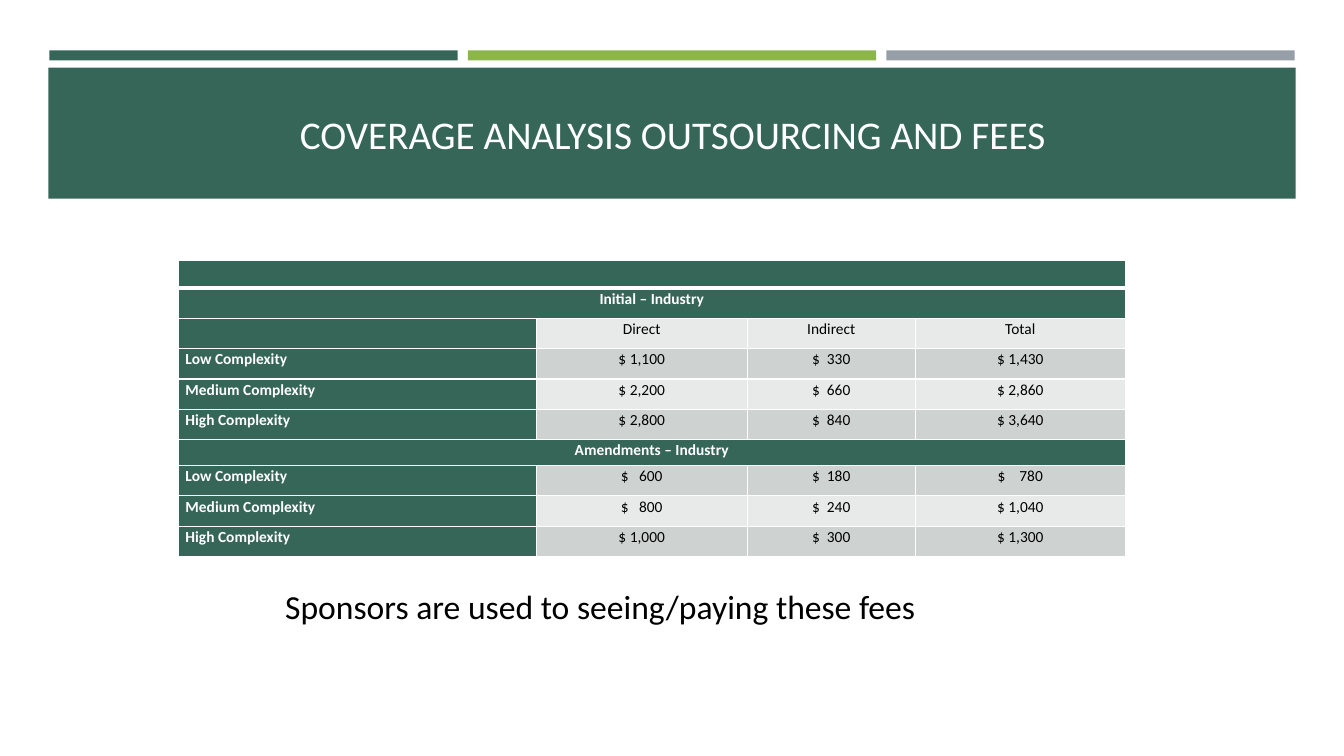
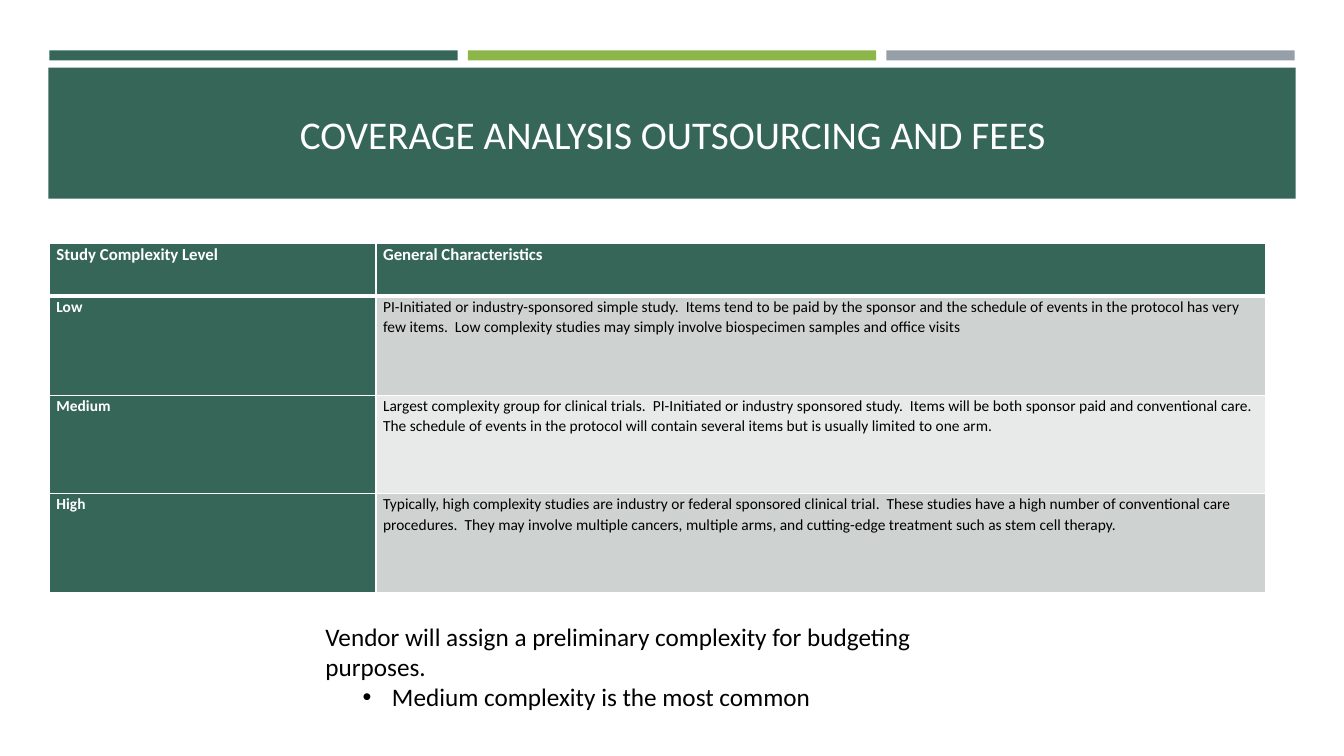
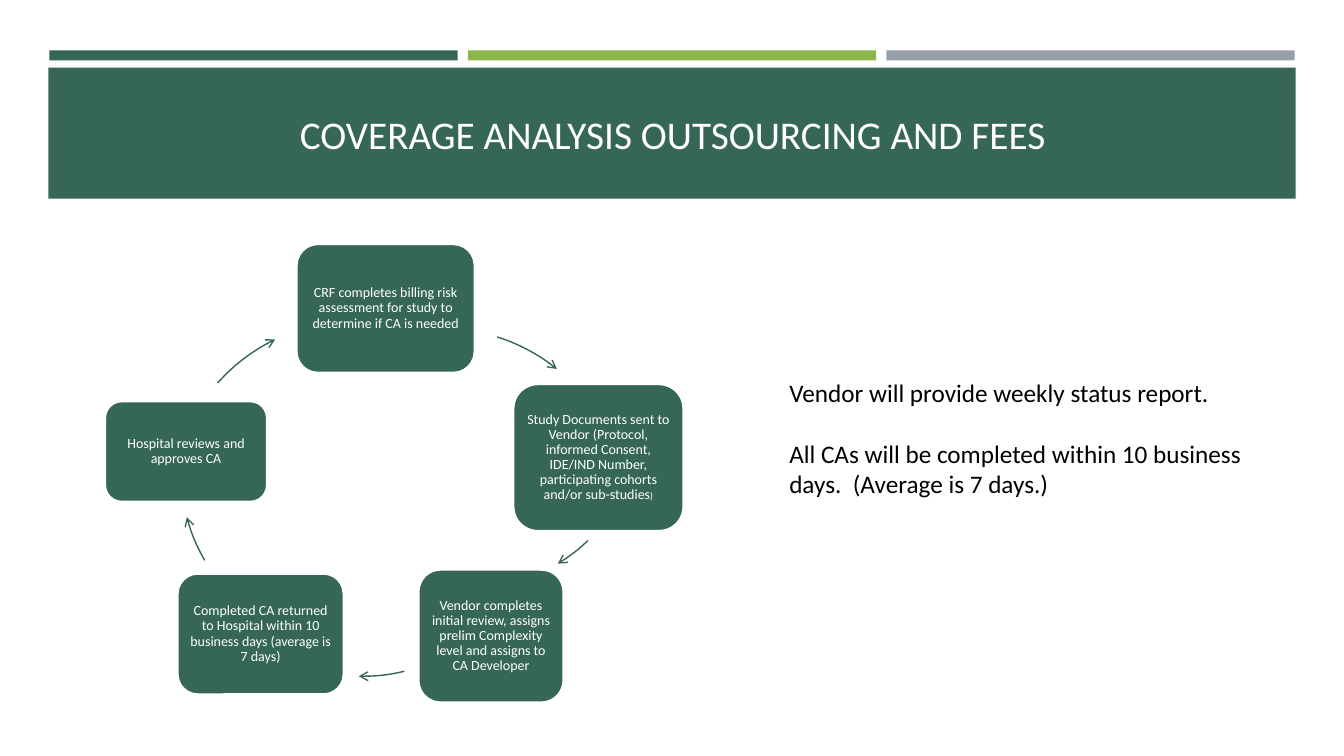
import lxml.etree
import pptx
import pptx.dml.color
import pptx.enum.shapes
import pptx.enum.text
import pptx.oxml.ns
import pptx.util

SHAPE = pptx.enum.shapes.MSO_SHAPE
ALIGN = pptx.enum.text.PP_ALIGN
ANCHOR = pptx.enum.text.MSO_ANCHOR
qn = pptx.oxml.ns.qn

GREEN, LIME, GREY = "366658", "8CB64A", "969FA7"
WHITE, BLACK = "FFFFFF", "000000"
STRIPES = ["E8EAEA", "CED3D1"]
FONT = "Calibri"
TITLE = "COVERAGE ANALYSIS OUTSOURCING AND FEES"


def px(length):
    return pptx.util.Emu(length * 9144)


def paint(target, colour):
    target.solid()
    target.fore_color.rgb = pptx.dml.color.RGBColor.from_string(colour)


class Deck:
    def __init__(self):
        self.deck = pptx.Presentation()
        self.deck.slide_width, self.deck.slide_height = px(1333), px(750)
        self.layout = self.deck.slide_layouts[5]
        self.page = None

    def open_page(self):
        first = self.page is None
        self.page = self.deck.slides.add_slide(self.layout)
        if first:
            self.share_bands()
        title = self.page.shapes.title
        title.left, title.top, title.width, title.height = map(px, (64, 77, 1206, 111))
        title.text_frame.text = TITLE
        title.text_frame.word_wrap = True
        title.text_frame.vertical_anchor = ANCHOR.MIDDLE
        title.text_frame.paragraphs[0].alignment = ALIGN.CENTER
        self.style(title.text_frame.paragraphs[0], 28, WHITE)

    def share_bands(self):
        bands = [(49 + 415 * i, 50, 405, 10, colour) for i, colour in enumerate((GREEN, LIME, GREY))]
        bands.append((48, 67, 1237, 130, GREEN))
        for number, (*place, colour) in enumerate(bands):
            band = self.shape(SHAPE.RECTANGLE, place, colour)
            band.element.nvSpPr.cNvPr.set("id", str(100 + number))
            self.layout.shapes.element.append(band.element)

    def style(self, para, size, colour, bold=False):
        for span in para.runs:
            span.font.name = FONT
            span.font.size = pptx.util.Pt(size)
            span.font.bold = bold
            paint(span.font.fill, colour)

    def shape(self, kind, place, fill=None, line=None, width=1):
        shape = self.page.shapes.add_shape(kind, *map(px, place))
        shape.shadow.inherit = False
        if fill:
            paint(shape.fill, fill)
        else:
            shape.fill.background()
        if line:
            paint(shape.line.fill, line)
            shape.line.width = pptx.util.Pt(width)
        else:
            shape.line.fill.background()
        return shape

    def text(self, place, lines, size, gap=0):
        box = self.page.shapes.add_textbox(*map(px, place))
        frame = box.text_frame
        frame.word_wrap = True
        frame.auto_size = pptx.enum.text.MSO_AUTO_SIZE.SHAPE_TO_FIT_TEXT
        frame.text = "\n".join(lines)
        for para in frame.paragraphs:
            self.style(para, size, BLACK)
        for para in frame.paragraphs[1:]:
            para.space_before = pptx.util.Pt(gap)
        return frame

    def bullet(self, para, left, hang):
        props = para._p.get_or_add_pPr()
        props.set("marL", str(px(left)))
        props.set("indent", str(-px(hang)))
        lxml.etree.SubElement(props, qn("a:buFont"), typeface="Arial")
        lxml.etree.SubElement(props, qn("a:buChar"), char="•")

    def step(self, place, text, small_end=""):
        box = self.shape(SHAPE.ROUNDED_RECTANGLE, place, GREEN, WHITE, 1.75)
        frame = box.text_frame
        frame.word_wrap = True
        frame.vertical_anchor = ANCHOR.MIDDLE
        frame.margin_left = frame.margin_right = frame.margin_top = frame.margin_bottom = px(4)
        frame.text = text
        para = frame.paragraphs[0]
        para.alignment = ALIGN.CENTER
        para.line_spacing = 0.9
        if small_end:
            para.add_run().text = small_end
        self.style(para, 10, WHITE)
        if small_end:
            para.runs[-1].font.size = pptx.util.Pt(7)

    def arc_arrow(self, left, top, start, end):
        arc = self.shape(SHAPE.ARC, (left, top, 360, 360), line=GREEN)
        for index, degrees in enumerate((start, end)):
            arc.adjustments[index] = degrees * 0.6
        lxml.etree.SubElement(arc.element.spPr.find(qn("a:ln")), qn("a:tailEnd"), type="arrow")

    def borders(self, cell, top, bottom):
        props = cell._tc.get_or_add_tcPr()
        for side, width in (("L", 1), ("R", 1), ("T", top), ("B", bottom)):
            line = lxml.etree.SubElement(props, qn("a:ln" + side), w=str(pptx.util.Pt(width)))
            fill = lxml.etree.SubElement(line, qn("a:solidFill"))
            lxml.etree.SubElement(fill, qn("a:srgbClr"), val=WHITE)

    def table(self, left, top, widths, heights, rows, centred=False):
        place = (left, top, sum(widths), sum(heights))
        table = self.page.shapes.add_table(len(rows), len(widths), *map(px, place)).table
        for column, width in zip(table.columns, widths):
            column.width = px(width)
        for row, height in zip(table.rows, heights):
            row.height = px(height)
        for r, texts in enumerate(rows):
            spans = len(texts) == 1
            for c in range(len(widths)):
                cell = table.cell(r, c)
                heading = r == 0 or c == 0 or spans
                self.borders(cell, 3 if r == 1 else 1, 3 if r == 0 else 1)
                paint(cell.fill, GREEN if heading else STRIPES[r % 2])
                cell.margin_left = cell.margin_right = px(7)
                cell.margin_top = cell.margin_bottom = 0
                text = texts[c] if c < len(texts) else ""
                cell.text_frame.text = text
                para = cell.text_frame.paragraphs[0]
                para.line_spacing = 1.07
                if centred and (spans or c > 0):
                    para.alignment = ALIGN.CENTER
                if not text:
                    lxml.etree.SubElement(para._p, qn("a:endParaRPr"), sz="1100")
                elif r == 0 or spans:
                    para.space_before = pptx.util.Pt(2 if spans else 12)
                self.style(para, 12 if r == 0 else 11, WHITE if heading else BLACK, heading)
            if spans:
                table.cell(r, 0).merge(table.cell(r, len(widths) - 1))


def fees_page(deck):
    deck.open_page()
    deck.text((273, 576, 921, 121), ["Sponsors are used to seeing/paying these fees"], 24)
    rows = [
        [""],
        ["Initial – Industry"],
        ["", "Direct", "Indirect", "Total"],
        ["Low Complexity", "$ 1,100", "$  330", "$ 1,430"],
        ["Medium Complexity", "$ 2,200", "$  660", "$ 2,860"],
        ["High Complexity", "$ 2,800", "$  840", "$ 3,640"],
        ["Amendments – Industry"],
        ["Low Complexity", "$   600", "$  180", "$    780"],
        ["Medium Complexity", "$   800", "$  240", "$ 1,040"],
        ["High Complexity", "$ 1,000", "$  300", "$ 1,300"],
    ]
    heights = [28, 30, 30, 30, 30, 30, 26, 30, 30, 30]
    deck.table(177, 258, [355, 209, 167, 208], heights, rows, centred=True)


def complexity_page(deck):
    deck.open_page()
    rows = [
        ["Study Complexity Level", "General Characteristics"],
        ["Low", "PI-Initiated or industry-sponsored simple study.  Items tend to be paid by the sponsor "
         "and the schedule of events in the protocol has very few items.  Low complexity studies may "
         "simply involve biospecimen samples and office visits"],
        ["Medium", "Largest complexity group for clinical trials.  PI-Initiated or industry sponsored "
         "study.  Items will be both sponsor paid and conventional care.  The schedule of events in the "
         "protocol will contain several items but is usually limited to one arm."],
        ["High", "Typically, high complexity studies are industry or federal sponsored clinical trial.  "
         "These studies have a high number of conventional care procedures.  They may involve multiple "
         "cancers, multiple arms, and cutting-edge treatment such as stem cell therapy."],
    ]
    deck.table(49, 241, [324, 882], [53, 98, 98, 98], rows)
    lines = ["Vendor will assign a preliminary complexity for budgeting purposes.",
             "Medium complexity is the most common"]
    frame = deck.text((313, 611, 667, 101), lines, 18)
    deck.bullet(frame.paragraphs[1], 66, 29)


def process_page(deck):
    deck.open_page()
    steps = [
        ((294, 242, 177, 128), "CRF completes billing risk assessment for study to determine if CA is needed"),
        ((509, 381, 169, 146), "Study Documents sent to Vendor (Protocol, informed Consent, IDE/IND Number, "
         "participating cohorts and/or sub-studies", ")"),
        ((415, 565, 144, 132), "Vendor completes initial review, assigns prelim Complexity level and assigns "
         "to CA Developer"),
        ((176, 569, 165, 120), "Completed CA returned to Hospital within 10 business days (average is 7 days)"),
        ((104, 398, 161, 100), "Hospital reviews and approves CA"),
    ]
    arrows = [
        (259, 326, 287.5, 309),
        (279, 226, 46.4, 58.4),
        (179, 311, 76.5, 91),
        (179, 286, 150, 164.8),
        (171, 319, 221.4, 244.3),
    ]
    for step, arrow in zip(steps, arrows):
        deck.step(*step)
        deck.arc_arrow(*arrow)
    lines = ["Vendor will provide weekly status report.",
             "All CAs will be completed within 10 business days.  (Average is 7 days.)"]
    deck.text((773, 369, 490, 161), lines, 18, gap=22)


def main():
    deck = Deck()
    fees_page(deck)
    complexity_page(deck)
    process_page(deck)
    deck.deck.save("out.pptx")


if __name__ == "__main__":
    main()
